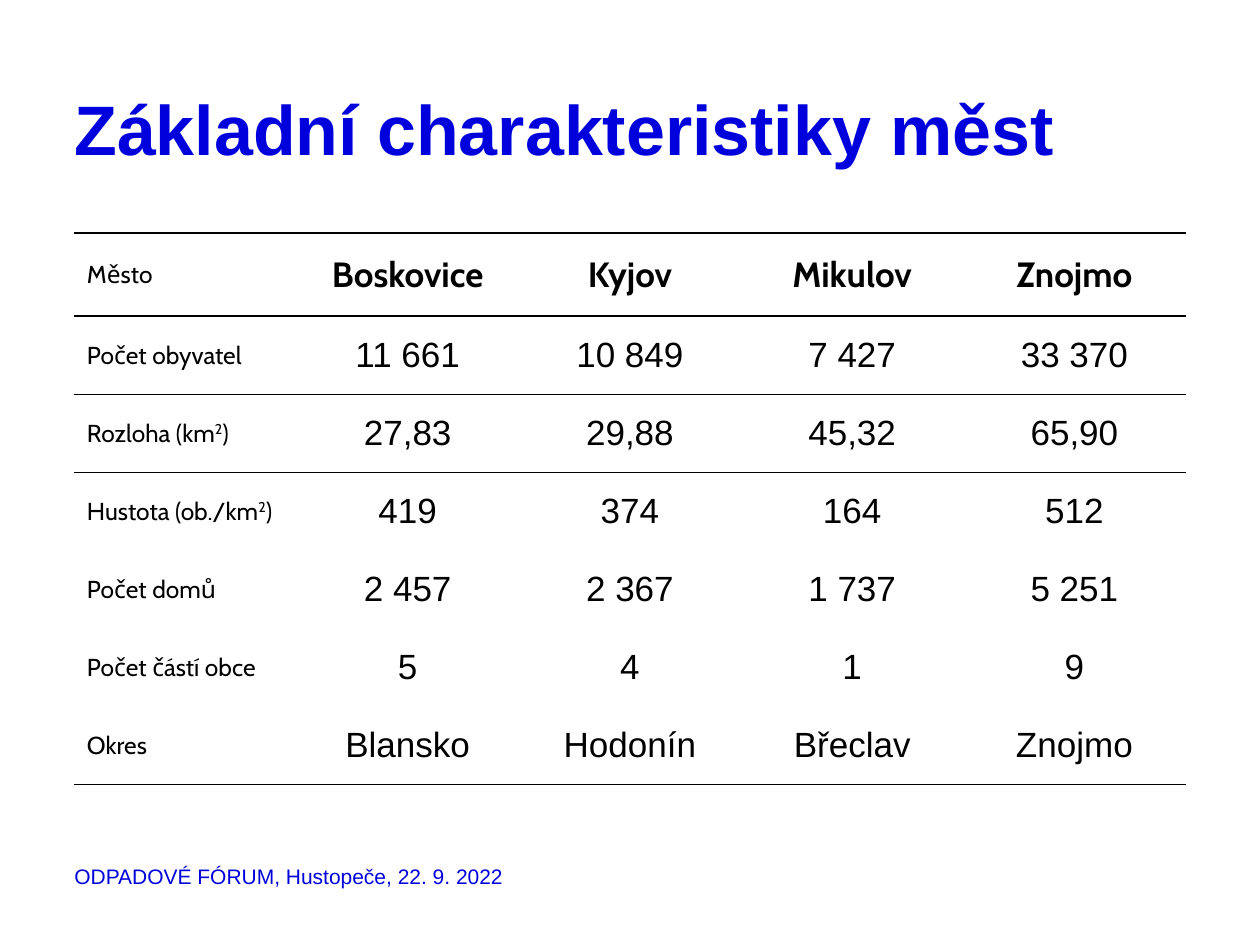
from lxml import etree
from pptx import Presentation
from pptx.dml.color import RGBColor
from pptx.enum.text import MSO_ANCHOR, MSO_AUTO_SIZE, PP_ALIGN
from pptx.oxml.ns import qn
from pptx.util import Inches, Pt

TOP, MIDDLE = MSO_ANCHOR.TOP, MSO_ANCHOR.MIDDLE
LEFT, CENTER = PP_ALIGN.LEFT, PP_ALIGN.CENTER
NO_FIT = MSO_AUTO_SIZE.NONE
NO_GRID = "{2D5ABB26-0587-4C30-8999-92F81FD0307C}"

ROWS = [
    ["Město", "Boskovice", "Kyjov", "Mikulov", "Znojmo"],
    ["Počet obyvatel", "11 661", "10 849", "7 427", "33 370"],
    ["Rozloha (km²)", "27,83", "29,88", "45,32", "65,90"],
    ["Hustota (ob./km²)", "419", "374", "164", "512"],
    ["Počet domů", "2 457", "2 367", "1 737", "5 251"],
    ["Počet částí obce", "5", "4", "1", "9"],
    ["Okres", "Blansko", "Hodonín", "Břeclav", "Znojmo"],
]
RULED = (0, 1, len(ROWS) - 1)  # rows with a line below


def color(code):
    return RGBColor.from_string(code)


class Deck:
    blue, black = "0000DC", "000000"
    sans, label = "Arial", "Cabin"
    left, width = Inches(0.59), Inches(8.82)

    def __init__(self):
        self.prs = Presentation()
        self.prs.slide_width, self.prs.slide_height = Inches(10), Inches(7.5)
        self.slide = self.prs.slides.add_slide(self.prs.slide_layouts[5])

    def style(self, para, face, size, ink, bold=False, align=LEFT):
        para.alignment = align
        font = para.font
        font.name, font.size, font.bold = face, Pt(size), bold
        font.color.rgb = color(ink)

    def fill_box(self, shape, text, size, anchor, bold=False):
        frame = shape.text_frame
        frame.text = text
        frame.word_wrap, frame.auto_size = True, NO_FIT
        frame.vertical_anchor = anchor
        frame.margin_left = frame.margin_right = 0
        frame.margin_top = frame.margin_bottom = 0
        para = frame.paragraphs[0]
        self.style(para, self.sans, size, self.blue, bold)
        return para

    def title(self, text):
        shape = self.slide.shapes.title
        shape.left, shape.top = self.left, Inches(0.79)
        shape.width, shape.height = self.width, Inches(0.49)
        para = self.fill_box(shape, text, 40, TOP, True)
        para.line_spacing = Pt(40)

    def footer(self, text):
        box = self.slide.shapes.add_textbox(
            self.left, Inches(6.81), Inches(6.5), Inches(0.28))
        self.fill_box(box, text, 12, MIDDLE)

    def rule(self, cell, side):
        """Draw a 1 pt line on one side of a cell."""
        props = cell._tc.get_or_add_tcPr()
        line = etree.SubElement(props, qn("a:" + side), w=str(Pt(1)))
        solid = etree.SubElement(line, qn("a:solidFill"))
        etree.SubElement(solid, qn("a:srgbClr"), val=self.black)

    def add_text(self, para, text):
        """Add text, with ² set as a raised 2."""
        base, power, rest = text.partition("²")
        para.add_run().text = base
        if power:
            run = para.add_run()
            run.text = "2"
            run.font._element.set("baseline", "30000")
            para.add_run().text = rest

    def cell(self, cell, text, row, col):
        head, first = row == 0, col == 0
        para = cell.text_frame.paragraphs[0]
        self.add_text(para, text)
        self.style(para, self.label if head or first else self.sans,
                   14 if first else 20, self.black,
                   head and not first, LEFT if first else CENTER)
        cell.vertical_anchor = MIDDLE
        if not head and not first:
            cell.margin_left = cell.margin_right = Inches(0.07)
            cell.margin_top = cell.margin_bottom = 0
        if head or row - 1 in RULED:
            self.rule(cell, "lnT")
        if row in RULED:
            self.rule(cell, "lnB")
        cell.fill.background()

    def table(self, rows):
        table = self.slide.shapes.add_table(
            len(rows), len(rows[0]), self.left, Inches(1.85),
            self.width, Inches(4.35)).table
        table.first_row = table.horz_banding = False
        table._tbl.tblPr.find(qn("a:tableStyleId")).text = NO_GRID
        for r, row in enumerate(rows):
            table.rows[r].height = Inches(0.62 if r else 0.66)
            for c, text in enumerate(row):
                self.cell(table.cell(r, c), text, r, c)


def main():
    deck = Deck()
    deck.footer("ODPADOVÉ FÓRUM, Hustopeče, 22. 9. 2022")
    deck.title("Základní charakteristiky měst")
    deck.table(ROWS)
    deck.prs.save("out.pptx")


if __name__ == "__main__":
    main()
